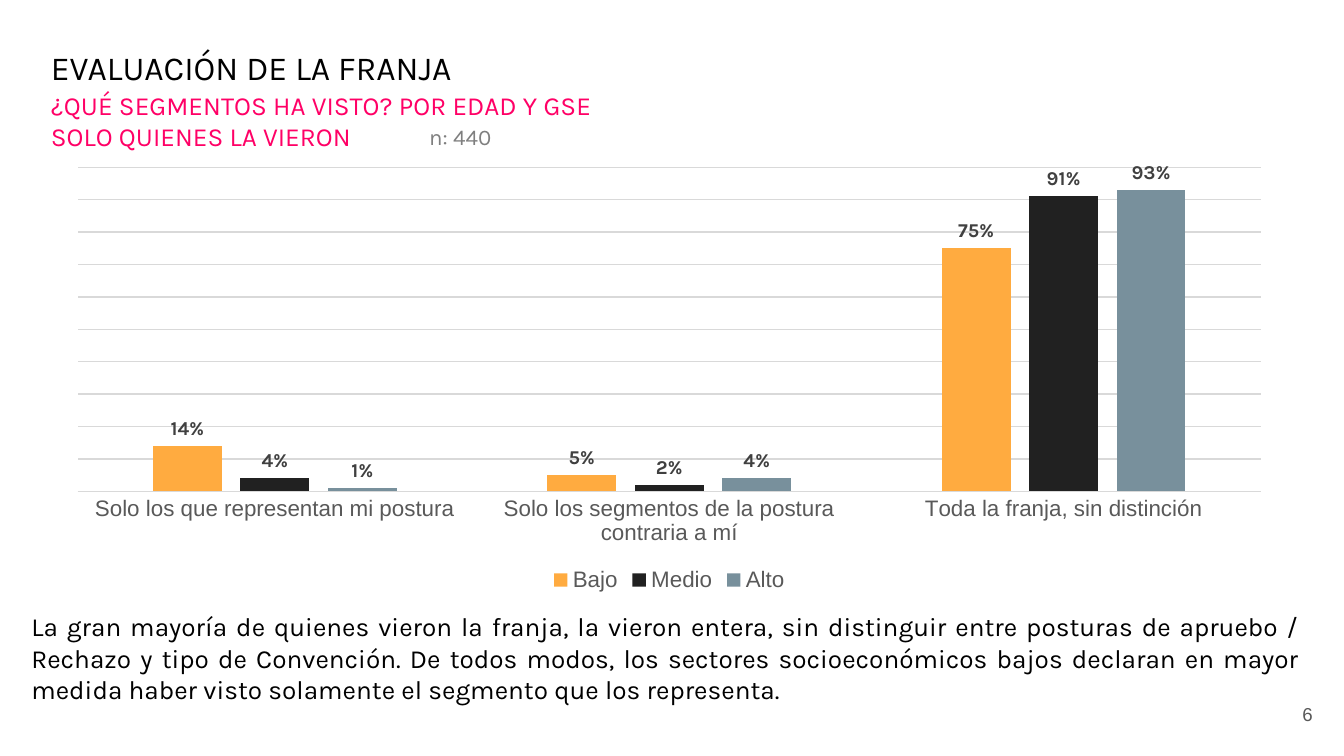
from copy import deepcopy

from pptx import Presentation
from pptx.chart.data import CategoryChartData
from pptx.dml.color import RGBColor
from pptx.enum.chart import XL_CHART_TYPE, XL_LABEL_POSITION, XL_LEGEND_POSITION, XL_TICK_MARK
from pptx.enum.text import MSO_ANCHOR, PP_ALIGN
from pptx.oxml.ns import qn
from pptx.util import Emu, Pt

PX = 4572
COLORS = {
    "background": "FFFFFF", "title": "000000", "subtitle": "FF0066",
    "sample": "7F7F7F", "axis": "595959", "grid": "D9D9D9", "label": "404040",
    "low": "FFAB40", "middle": "212121", "high": "78909C",
}
PERCENT = "###0%"
CATEGORIES = [
    "Solo los que representan mi postura",
    "Solo los segmentos de la postura contraria a mí",
    "Toda la franja, sin distinción",
]
SERIES = [
    ("Bajo", "low", (0.14, 0.05, 0.75)),
    ("Medio", "middle", (0.04, 0.02, 0.91)),
    ("Alto", "high", (0.01, 0.04, 0.93)),
]
CONCLUSION = (
    "La gran mayoría de quienes vieron la franja, la vieron entera, sin distinguir "
    "entre posturas de apruebo / Rechazo y tipo de Convención. De todos modos, los "
    "sectores socioeconómicos bajos declaran en mayor medida haber visto solamente "
    "el segmento que los representa."
)


def color(name):
    """Return the named colour."""
    return RGBColor.from_string(COLORS[name])


def px(*lengths):
    """Turn px lengths into EMU."""
    return [Emu(length * PX) for length in lengths]


def set_values(target, values):
    """Set each attribute of the target from a dict."""
    for name, value in values.items():
        setattr(target, name, value)


def style_font(font, size, color_name, family="Karla", bold=False):
    """Give a font its size, colour, family and weight."""
    set_values(font, {"size": Pt(size), "name": family, "bold": bold})
    font.color.rgb = color(color_name)


def add_text(slide, box, text, size, color_name, family="Karla",
             align=PP_ALIGN.LEFT, anchor=MSO_ANCHOR.TOP, inset=20):
    """Add a text box with one paragraph, whose line breaks share its font."""
    frame = slide.shapes.add_textbox(*px(*box)).text_frame
    side, edge = px(20, inset)
    set_values(frame, {
        "word_wrap": True, "vertical_anchor": anchor, "margin_left": side,
        "margin_right": side, "margin_top": edge, "margin_bottom": edge,
    })
    paragraph = frame.paragraphs[0]
    set_values(paragraph, {"text": text, "alignment": align})
    for run in paragraph.runs:
        style_font(run.font, size, color_name, family)
    for line_break in paragraph._p.findall(qn("a:br")):
        line_break.append(deepcopy(paragraph.runs[0]._r.rPr))


def add_heading(slide, box):
    """Add the title, the subtitle and the sample size."""
    left, top, width, height = box
    add_text(slide, (left, top, 1236, 90), "EVALUACIÓN DE LA FRANJA", 18, "title")
    add_text(slide, (left, top + 63, width, 90),
             "¿QUÉ SEGMENTOS HA VISTO? POR EDAD Y GSE\nSOLO QUIENES LA VIERON",
             14, "subtitle")
    add_text(slide, (left + 563, top + height - 60, 178, 60), "n: 440",
             12, "sample", inset=10)


def add_segment_chart(slide, box):
    """Add the column chart of segments seen by socioeconomic group."""
    data = CategoryChartData(number_format=PERCENT)
    data.categories = CATEGORIES
    for name, _, values in SERIES:
        data.add_series(name, values)
    chart = slide.shapes.add_chart(XL_CHART_TYPE.COLUMN_CLUSTERED, *px(*box), data).chart
    style_font(chart.font, 10, "title", "Arial")
    set_values(chart, {"has_title": False, "has_legend": True})
    set_values(chart.legend, {"position": XL_LEGEND_POSITION.BOTTOM,
                              "include_in_layout": False})
    style_font(chart.legend.font, 12, "axis", "Arial")

    category_axis, value_axis = chart.category_axis, chart.value_axis
    set_values(category_axis, {"major_tick_mark": XL_TICK_MARK.NONE,
                               "minor_tick_mark": XL_TICK_MARK.NONE})
    style_font(category_axis.tick_labels.font, 12, "axis", "Arial")
    set_values(value_axis, {"visible": False, "has_major_gridlines": True,
                            "minimum_scale": 0, "maximum_scale": 1, "major_unit": 0.1})
    for line in (category_axis.format.line, value_axis.major_gridlines.format.line):
        line.width = Pt(0.75)
        line.color.rgb = color("grid")

    plot = chart.plots[0]
    set_values(plot, {"gap_width": 219, "overlap": -27, "vary_by_categories": False})
    for series, (_, color_name, _) in zip(plot.series, SERIES):
        series.invert_if_negative = False
        series.format.fill.solid()
        series.format.fill.fore_color.rgb = color(color_name)
        labels = series.data_labels
        set_values(labels, {"show_value": True, "number_format": PERCENT,
                            "number_format_is_linked": False,
                            "position": XL_LABEL_POSITION.OUTSIDE_END})
        style_font(labels.font, 10.5, "label", bold=True)


def add_footer(slide, box):
    """Add the conclusion and the page number."""
    left, top, width, height = box
    add_text(slide, (left, top, width, 162), CONCLUSION, 14, "title",
             align=PP_ALIGN.JUSTIFY, inset=10)
    add_text(slide, (left + 1826, top + height - 86, 120, 86), "6", 10, "axis", "Arial",
             align=PP_ALIGN.RIGHT, anchor=MSO_ANCHOR.MIDDLE)


def main():
    """Build and save the slide."""
    presentation = Presentation()
    width, height = px(2000, 1125)
    set_values(presentation, {"slide_width": width, "slide_height": height})
    slide = presentation.slides.add_slide(presentation.slide_layouts[6])
    slide.background.fill.solid()
    slide.background.fill.fore_color.rgb = color("background")
    add_heading(slide, (56, 50, 1402, 184))
    add_segment_chart(slide, (79, 236, 1834, 653))
    add_footer(slide, (27, 899, 1928, 207))
    presentation.save("out.pptx")


if __name__ == "__main__":
    main()
